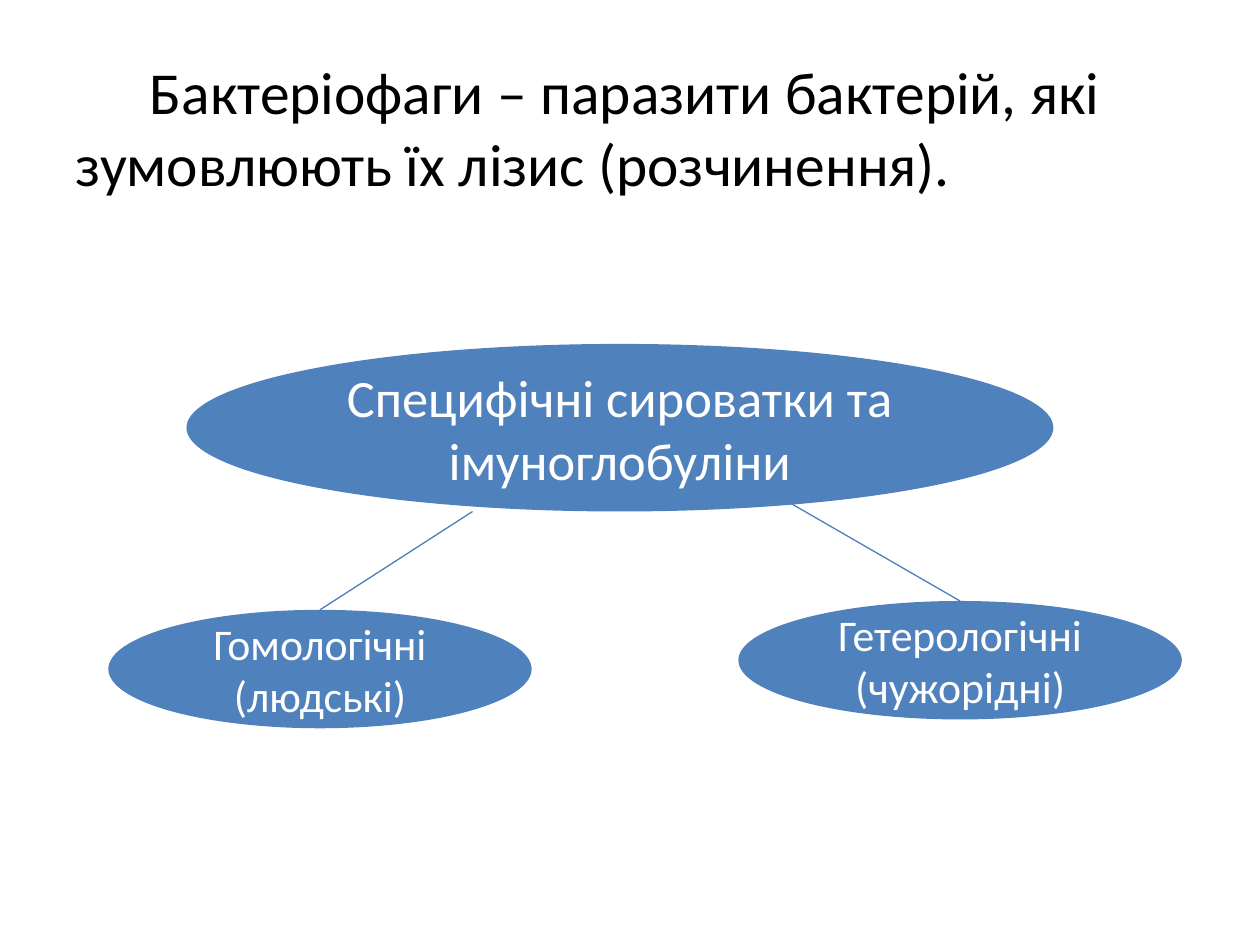
from lxml import etree
from pptx import Presentation
from pptx.dml.color import RGBColor
from pptx.enum.shapes import MSO_CONNECTOR, MSO_SHAPE
from pptx.enum.text import MSO_ANCHOR, PP_ALIGN
from pptx.oxml.ns import qn
from pptx.util import Inches, Pt

LINE, OVAL = MSO_CONNECTOR.STRAIGHT, MSO_SHAPE.OVAL
CENTER, MIDDLE = PP_ALIGN.CENTER, MSO_ANCHOR.MIDDLE
BLACK = RGBColor(0x00, 0x00, 0x00)
WHITE = RGBColor(0xFF, 0xFF, 0xFF)
BLUE = RGBColor(0x4F, 0x81, 0xBD)
LINE_BLUE = RGBColor(0x4B, 0x7E, 0xBC)
FONT = "Calibri"
TOP_SITE = 0

DEFINITION = "Бактеріофаги – паразити бактерій, які зумовлюють їх лізис (розчинення)."
ROOT = ("Специфічні сироватки та імуноглобуліни", (1.48, 2.73, 6.88, 1.33), 30)
# text, box, size, start of the line from the root
BRANCHES = [
    ("Гомологічні (людські)", (0.86, 4.84, 3.36, 0.94), 25, (3.75, 4.06)),
    ("Гетерологічні (чужорідні)", (5.86, 4.77, 3.52, 0.94), 25, (6.25, 3.98)),
]


def set_text(tf, text, size, color):
    tf.word_wrap = True
    tf.text = text
    p = tf.paragraphs[0]
    font = p.runs[0].font
    font.name, font.size, font.color.rgb = FONT, Pt(size), color
    return p


def add_oval(s, text, box, size):
    sp = s.shapes.add_shape(OVAL, *map(Inches, box))
    sp.shadow.inherit = False
    sp.fill.solid()
    sp.fill.fore_color.rgb = BLUE
    sp.line.fill.background()
    sp.text_frame.vertical_anchor = MIDDLE
    set_text(sp.text_frame, text, size, WHITE).alignment = CENTER
    return sp


def add_branch_line(s, start, oval):
    x, y = map(Inches, start)
    line = s.shapes.add_connector(LINE, x, y, x, y)
    line.end_connect(oval, TOP_SITE)
    line.line.color.rgb = LINE_BLUE
    line.line.width = Pt(0.75)
    etree.SubElement(line._element.spPr, qn("a:effectLst"))


prs = Presentation()
prs.slide_width, prs.slide_height = Inches(10), Inches(7.5)
s = prs.slides.add_slide(prs.slide_layouts[6])

body = s.shapes.add_textbox(*map(Inches, (0.5, 0.39, 9.03, 6.69)))
p = set_text(body.text_frame, DEFINITION, 34, BLACK)
pPr = p._p.get_or_add_pPr()
pPr.set("marL", "0")
pPr.set("indent", str(Inches(0.59)))

add_oval(s, *ROOT)
for text, box, size, start in BRANCHES:
    add_branch_line(s, start, add_oval(s, text, box, size))

prs.save("out.pptx")
